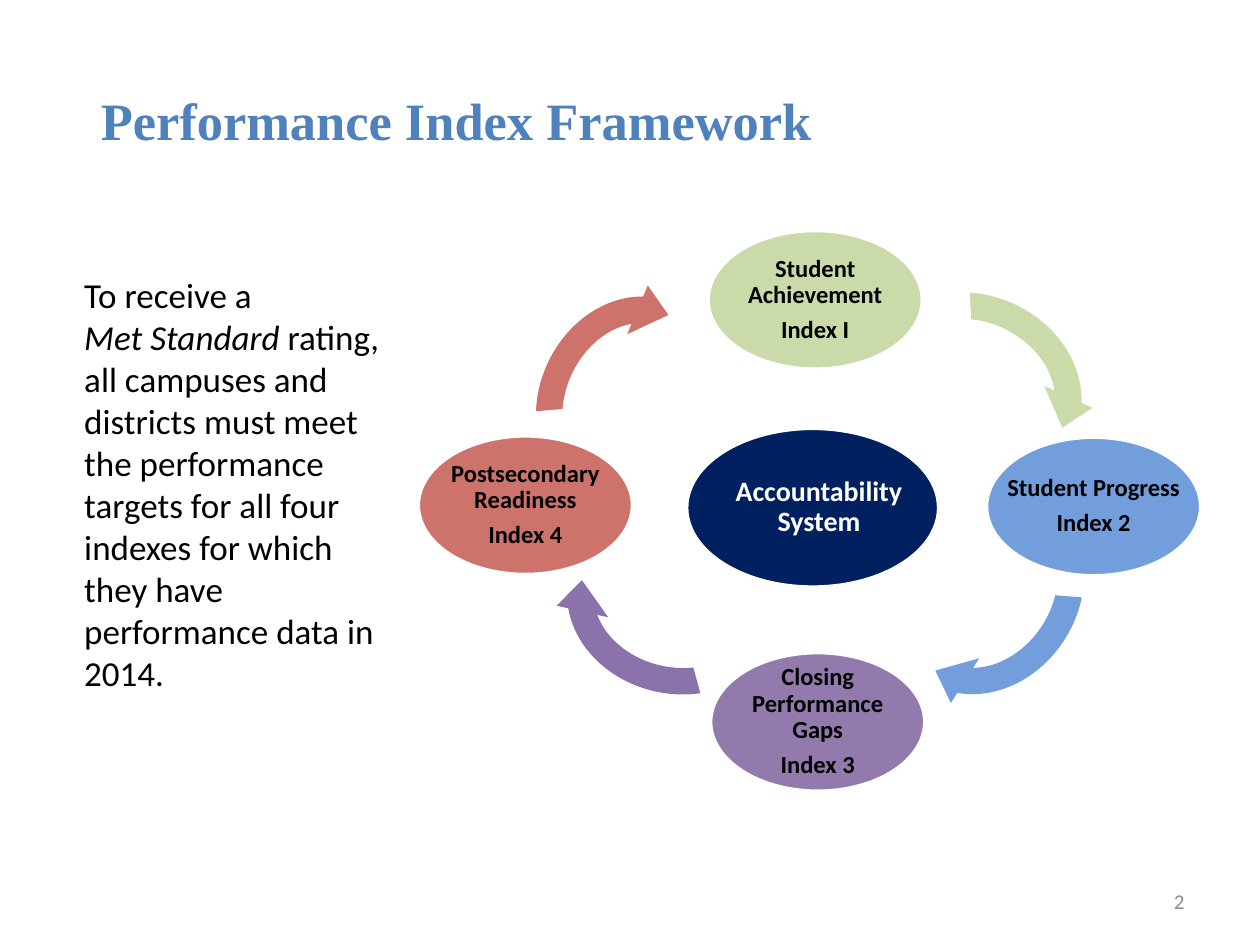
from dataclasses import dataclass

from lxml.etree import SubElement
from pptx import Presentation
from pptx.dml.color import RGBColor
from pptx.enum.shapes import MSO_SHAPE
from pptx.enum.text import MSO_ANCHOR, PP_ALIGN
from pptx.oxml.ns import qn
from pptx.util import Inches, Pt


@dataclass(frozen=True)
class Theme:
    heading_font: str = "Times New Roman"
    body_font: str = "Calibri"
    heading: str = "4F81BD"
    ink: str = "000000"
    paper: str = "FFFFFF"
    muted: str = "8C8C8C"
    navy: str = "002060"
    green: str = "CADAA9"
    blue: str = "729FDC"
    purple: str = "927AAD"
    violet: str = "8B72AA"
    red: str = "CD736B"
    title_size: int = 30
    body_size: int = 20
    hub_size: int = 16
    node_size: int = 14
    number_size: int = 12


T = Theme()
WIDTH, HEIGHT = 10, 7.5
TITLE = "Performance Index Framework"
BODY = [
    [("To receive a", False)],
    [("Met Standard ", True),
     ("rating, all campuses and districts must meet the performance targets "
      "for all four indexes for which they have performance data in 2014.", False)],
]
NODE, HUB, ARROW = (1.7, 1.1), (2, 1.26), (1.94, 1.68)
NODE_LABEL_HEIGHT, HUB_LABEL = 0.78, (1.48, 0.89)
HUB_CENTER, HUB_LABEL_CENTER = (6.45, 4.03), (6.5, 4.03)
HUB_TEXT = ["Accountability System"]
NODES = [
    (["Student Achievement", "Index I"], (6.47, 2.38), 1.2, T.green),
    (["Student Progress", "Index 2"], (8.68, 4.02), 1.51, T.blue),
    (["Closing Performance Gaps", "Index 3"], (6.49, 5.73), 1.21, T.purple),
    (["Postsecondary Readiness", "Index 4"], (4.17, 4.01), 1.25, T.red),
]
ARROWS = [
    ((7.74, 3.08), 24.5, T.green),
    ((7.83, 4.68), 122.4, T.blue),
    ((5.36, 4.77), 192.6, T.violet),
    ((5.01, 3.2), 292.9, T.red),
]
ARROW_SHAPE = [0.125, 11.423, 204.577, 145.349, 0.125]


def centered(center, size):
    return [Inches(c - d / 2) for c, d in zip(center, size)] + [Inches(d) for d in size]


def add_run(p, text, size, color, font=T.body_font, bold=False, italic=False):
    r = p.add_run()
    r.text = text
    r.font.name, r.font.size = font, Pt(size)
    r.font.bold, r.font.italic = bold, italic
    r.font.color.rgb = RGBColor.from_string(color)


def add_paragraph(tf, first):
    return tf.paragraphs[0] if first else tf.add_paragraph()


def add_box(s, box):
    tf = s.shapes.add_textbox(*box).text_frame
    tf.word_wrap = True
    return tf


def add_filled(s, kind, center, size, fill):
    sp = s.shapes.add_shape(kind, *centered(center, size))
    sp.shadow.inherit = False
    sp.fill.solid()
    sp.fill.fore_color.rgb = RGBColor.from_string(fill)
    sp.line.fill.background()
    return sp


def add_ellipse(s, center, size, fill):
    sp = add_filled(s, MSO_SHAPE.OVAL, center, size, fill)
    sp.line.color.rgb = RGBColor.from_string(T.paper)
    sp.line.width = Pt(2)


def add_label(s, lines, center, size, points, color):
    tf = add_box(s, centered(center, size))
    tf.vertical_anchor = MSO_ANCHOR.MIDDLE
    tf.margin_left = tf.margin_right = tf.margin_top = tf.margin_bottom = Inches(0.02)
    for i, line in enumerate(lines):
        p = add_paragraph(tf, i == 0)
        p.alignment, p.line_spacing = PP_ALIGN.CENTER, 0.9
        after = SubElement(p._p.get_or_add_pPr(), qn("a:spcAft"))
        SubElement(after, qn("a:spcPct")).set("val", "35000")
        add_run(p, line, points, color, bold=True)


def add_arrow(s, center, rotation, fill):
    sp = add_filled(s, MSO_SHAPE.CIRCULAR_ARROW, center, ARROW, fill)
    sp.rotation = rotation
    for i, value in enumerate(ARROW_SHAPE):
        sp.adjustments[i] = value


def add_title(s):
    sp = s.shapes.title
    sp.left, sp.top, sp.width, sp.height = map(Inches, (0.7, 0.3, 9.05, 0.95))
    tf = sp.text_frame
    tf.vertical_anchor = MSO_ANCHOR.BOTTOM
    p = tf.paragraphs[0]
    p.alignment, p.line_spacing = PP_ALIGN.LEFT, Pt(32)
    add_run(p, TITLE, T.title_size, T.heading, T.heading_font, bold=True)


def add_body(s):
    tf = add_box(s, map(Inches, (0.57, 2.12, 2.59, 3.47)))
    for i, runs in enumerate(BODY):
        p = add_paragraph(tf, i == 0)
        for text, italic in runs:
            add_run(p, text, T.body_size, T.ink, italic=italic)


def add_number(s):
    tf = add_box(s, map(Inches, (7.17, 6.95, 2.33, 0.4)))
    tf.vertical_anchor = MSO_ANCHOR.MIDDLE
    p = tf.paragraphs[0]
    p.alignment = PP_ALIGN.RIGHT
    add_run(p, "2", T.number_size, T.muted)


def main():
    """Build the performance index slide."""
    prs = Presentation()
    prs.slide_width, prs.slide_height = Inches(WIDTH), Inches(HEIGHT)
    s = prs.slides.add_slide(prs.slide_layouts[5])
    add_title(s)
    add_number(s)
    add_body(s)
    for lines, center, label_width, fill in NODES:
        add_ellipse(s, center, NODE, fill)
        add_label(s, lines, center, (label_width, NODE_LABEL_HEIGHT), T.node_size, T.ink)
    for center, rotation, fill in ARROWS:
        add_arrow(s, center, rotation, fill)
    add_ellipse(s, HUB_CENTER, HUB, T.navy)
    add_label(s, HUB_TEXT, HUB_LABEL_CENTER, HUB_LABEL, T.hub_size, T.paper)
    prs.save("out.pptx")


if __name__ == "__main__":
    main()
